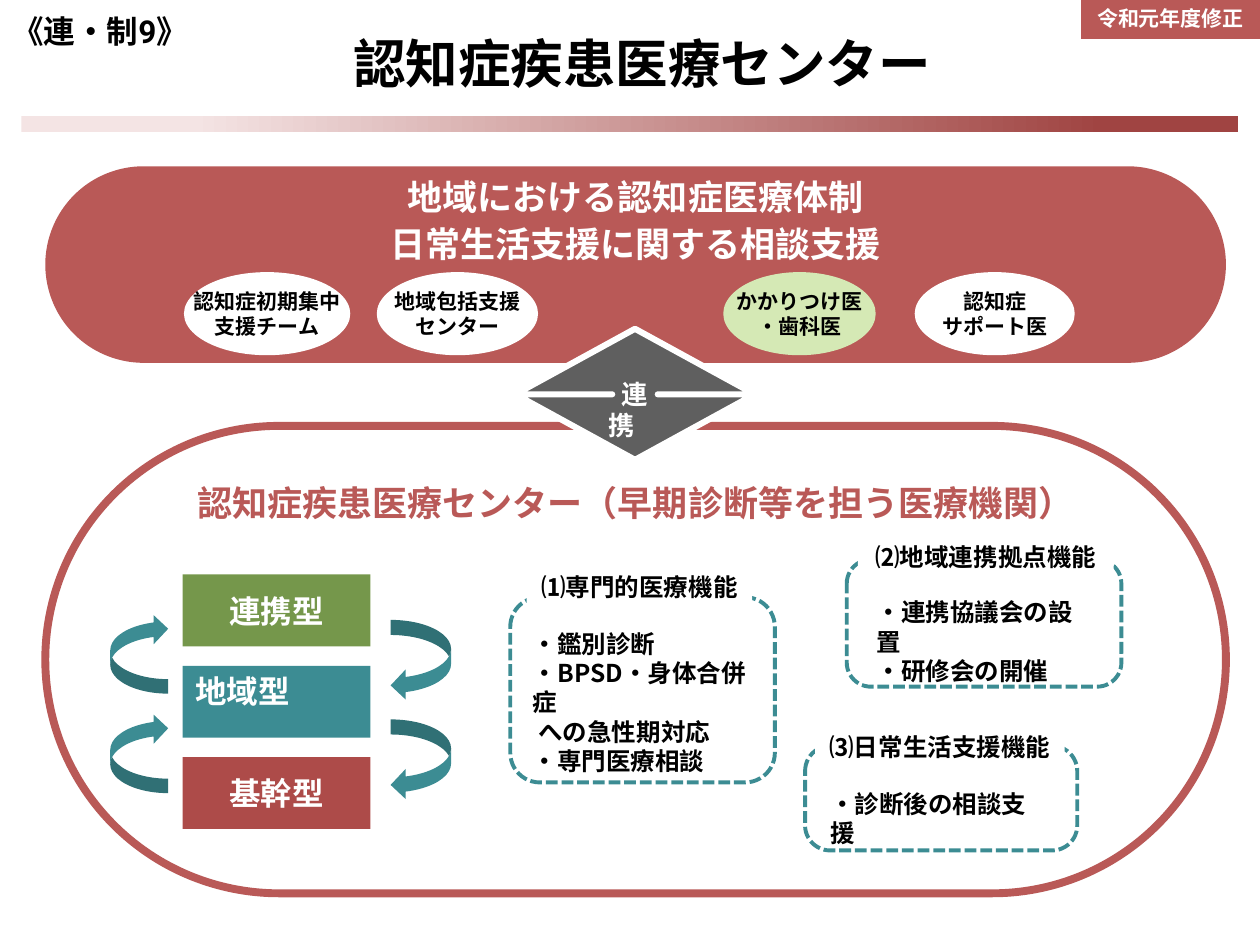
"""Build the dementia medical centre slide."""
from pptx import Presentation
from pptx import util as u
from pptx.dml.color import RGBColor
from pptx.enum import dml, shapes, text
from pptx.oxml.ns import qn

FONT = "Noto Sans CJK JP"
RED, TEAL, WHITE, BLACK = "B95957", "3C8C93", "FFFFFF", "000000"
SHAPE = shapes.MSO_SHAPE
LEFT, CENTER = text.PP_ALIGN.LEFT, text.PP_ALIGN.CENTER
TOP, MIDDLE = text.MSO_ANCHOR.TOP, text.MSO_ANCHOR.MIDDLE


def rgb(value):
    """Turn a hex string into a colour."""
    return RGBColor.from_string(value)


def add_run(p, words, size, color, font=FONT):
    """Add one bold run with its Latin and East Asian font."""
    r = p.add_run()
    r.text = words
    r.font.size, r.font.bold, r.font.name = u.Pt(size), True, font
    r.font.color.rgb = rgb(color)
    ea = r.font._element.makeelement(qn("a:ea"), {"typeface": font})
    r.font._element.find(qn("a:latin")).addnext(ea)


def write(sp, lines, size, color=BLACK, align=CENTER, anchor=MIDDLE,
          wrap=True, spacing=1.2, bottom=0.05):
    """Write lines as paragraphs; a line is a string or (words, font) pairs."""
    tf = sp.text_frame
    tf.word_wrap, tf.vertical_anchor = wrap, anchor
    tf.margin_left = tf.margin_right = u.Inches(0.1)
    tf.margin_top, tf.margin_bottom = u.Inches(0.05), u.Inches(bottom)
    for i, line in enumerate(lines):
        p = tf.add_paragraph() if i else tf.paragraphs[0]
        p.alignment = align
        p.line_spacing = u.Pt(round(size * spacing, 1))
        runs = [(line, FONT)] if isinstance(line, str) else line
        for words, font in runs:
            add_run(p, words, size, color, font)


def add_shape(s, kind, box, fill=None, line=None, width=1, adj=()):
    """Add a flat preset shape."""
    sp = s.shapes.add_shape(kind, *map(u.Inches, box))
    sp.shadow.inherit = False
    if fill:
        sp.fill.solid()
        sp.fill.fore_color.rgb = rgb(fill)
    else:
        sp.fill.background()
    if line:
        sp.line.color.rgb, sp.line.width = rgb(line), u.Pt(width)
    else:
        sp.line.fill.background()
    for i, value in enumerate(adj):
        sp.adjustments[i] = value
    return sp


def add_text(s, box, lines, size, **style):
    """Add a text box."""
    write(s.shapes.add_textbox(*map(u.Inches, box)), lines, size, **style)


def add_title(s, words):
    """Place and fill the title placeholder."""
    sp = s.shapes.title
    sp.left, sp.top, sp.width, sp.height = map(u.Inches, (0.78, 0.2, 8.63, 0.6))
    write(sp, [words], 30)


def add_rule(s):
    """Add the gradient bar under the title."""
    sp = add_shape(s, SHAPE.RECTANGLE, (0.17, 0.92, 9.66, 0.13), RED)
    sp.fill.gradient()
    sp.fill.gradient_angle = 0
    stops = ((0.14, "F4E4E4"), (0.89, "A04442"))
    for stop, (position, color) in zip(sp.fill.gradient_stops, stops):
        stop.position, stop.color.rgb = position, rgb(color)


def add_types(s):
    """Add the three centre types and the arrows that cycle between them."""
    types = (("連携型", "75974B", CENTER, MIDDLE),
             ("地域型", TEAL, LEFT, TOP),
             ("基幹型", "AD4B49", CENTER, MIDDLE))
    for i, (words, fill, align, anchor) in enumerate(types):
        box = (1.45, 4.56 + 0.725 * i, 1.49, 0.57)
        sp = add_shape(s, SHAPE.RECTANGLE, box, fill)
        write(sp, [words], 18, WHITE, align, anchor)
    for i in range(2):
        for x, y, w, h, angle in ((0.79, 4.96, 0.63, 0.46, 270),
                                  (3.02, 5, 0.64, 0.48, 90)):
            box = (x, y + 0.79 * i, w, h)
            add_shape(s, SHAPE.CURVED_DOWN_ARROW, box, TEAL).rotation = angle


def add_function(s, frame, adj, heading_box, heading, body_box, body):
    """Add a dashed panel with a heading over its top edge."""
    add_text(s, body_box, body, 14, align=LEFT, anchor=TOP)
    sp = add_shape(s, SHAPE.ROUNDED_RECTANGLE, frame, None, TEAL, 2.25, [adj])
    sp.line.dash_style = dml.MSO_LINE.SQUARE_DOT
    sp = add_shape(s, SHAPE.RECTANGLE, heading_box, WHITE)
    write(sp, [heading], 14, anchor=TOP)


def main():
    """Build and save the slide."""
    prs = Presentation()
    prs.slide_width, prs.slide_height = u.Inches(10), u.Inches(7.5)
    s = prs.slides.add_slide(prs.slide_layouts[5])
    add_title(s, "認知症疾患医療センター")
    add_rule(s)

    centre = add_shape(s, SHAPE.ROUNDED_RECTANGLE, (0.36, 3.38, 9.37, 3.71),
                       None, RED, 4.5, [0.5])
    write(centre, ["認知症疾患医療センター（早期診断等を担う医療機関）"], 20, RED,
          bottom=2.55)
    region = add_shape(s, SHAPE.ROUNDED_RECTANGLE, (0.36, 1.32, 9.37, 1.56),
                       RED, adj=[0.5])
    write(region, ["地域における認知症医療体制", "日常生活支援に関する相談支援"], 20,
          WHITE, wrap=False, spacing=1.35, bottom=0.8)

    add_types(s)
    add_shape(s, SHAPE.UP_DOWN_ARROW, (4.09, 2.61, 1.9, 1.04), "5F5F5F",
              WHITE, 3.5, [0.45, 0.19])
    add_text(s, (4.69, 2.95, 0.7, 0.35), ["連 携　"], 15, color=WHITE, anchor=TOP)

    partners = ((1.46, 1.32, WHITE, ["認知症初期集中", "支援チーム"]),
                (2.99, 1.28, WHITE, ["地域包括支援", "センター"]),
                (5.74, 1.21, "D5E9B5", ["かかりつけ医", "・歯科医"]),
                (7.26, 1.27, WHITE, ["認知症", "サポート医"]))
    for x, w, fill, lines in partners:
        sp = add_shape(s, SHAPE.OVAL, (x, 2.16, w, 0.66), fill)
        write(sp, lines, 12, wrap=False)

    add_function(s, (4.05, 4.74, 2.1, 1.47), 0.16,
                 (4.18, 4.49, 1.79, 0.37), "⑴専門的医療機能",
                 (4.13, 4.94, 1.98, 1.15),
                 ["・鑑別診断", "・BPSD・身体合併症", " への急性期対応", "・専門医療相談"])
    add_function(s, (6.72, 4.44, 2.18, 1.01), 0.19,
                 (6.81, 4.25, 2.03, 0.34), "⑵地域連携拠点機能",
                 (6.86, 4.69, 1.94, 0.57), ["・連携協議会の設置", "・研修会の開催"])
    add_function(s, (6.39, 5.92, 2.16, 0.83), 0.24,
                 (6.47, 5.76, 1.98, 0.34), "⑶日常生活支援機能",
                 (6.49, 6.21, 1.9, 0.34), ["・診断後の相談支援"])

    add_text(s, (0, 0, 1.9, 0.49),
             [[("《連・制", FONT), ("9", "Roboto"), ("》", FONT)]], 18,
             align=LEFT)
    badge = add_shape(s, SHAPE.RECTANGLE, (8.58, -0.02, 1.42, 0.33), RED)
    write(badge, ["令和元年度修正"], 12, WHITE)
    prs.save("out.pptx")


if __name__ == "__main__":
    main()
